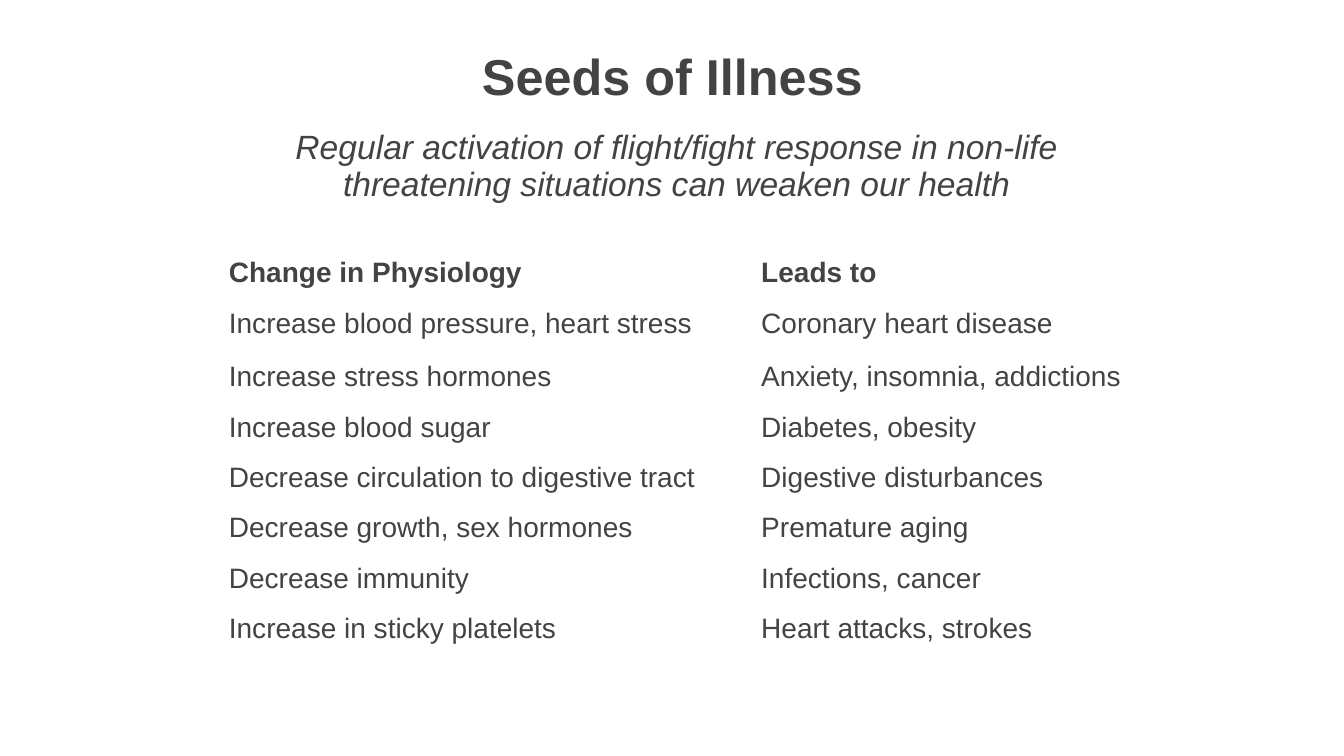
from dataclasses import dataclass

from pptx import Presentation
from pptx.dml.color import RGBColor
from pptx.enum.text import MSO_ANCHOR, PP_ALIGN
from pptx.util import Inches, Pt


@dataclass(frozen=True)
class Theme:
    font: str = "Arial"
    text: RGBColor = RGBColor(0x43, 0x43, 0x43)
    title_size: int = 36
    subtitle_size: int = 24
    table_size: int = 20


THEME = Theme()
TITLE = "Seeds of Illness"
SUBTITLE = ("Regular activation of flight/fight response in non-life "
            "threatening situations can weaken our health")
EFFECTS = [
    ("Change in Physiology", "Leads to"),
    ("Increase blood pressure, heart stress", "Coronary heart disease"),
    ("Increase stress hormones", "Anxiety, insomnia, addictions"),
    ("Increase blood sugar", "Diabetes, obesity"),
    ("Decrease circulation to digestive tract", "Digestive disturbances"),
    ("Decrease growth, sex hormones", "Premature aging"),
    ("Decrease immunity", "Infections, cancer"),
    ("Increase in sticky platelets", "Heart attacks, strokes"),
]
COLUMN_WIDTHS = [5.28, 3.97]
ROW_HEIGHTS = [0.43, 0.56] + [0.5] * 6


def write_text(text_frame, text, size, bold=False, italic=False, align=PP_ALIGN.LEFT):
    text_frame.text = text
    paragraph = text_frame.paragraphs[0]
    paragraph.alignment = align
    font = paragraph.font
    font.name = THEME.font
    font.size = Pt(size)
    font.bold = bold
    font.italic = italic
    font.color.rgb = THEME.text
    return paragraph


def add_title(slide):
    title = slide.shapes.title
    title.left, title.top = Inches(1.67), Inches(0.33)
    title.width, title.height = Inches(10), Inches(0.83)
    title.text_frame.vertical_anchor = MSO_ANCHOR.MIDDLE
    write_text(title.text_frame, TITLE, THEME.title_size, bold=True, align=PP_ALIGN.CENTER)


def add_subtitle(slide):
    box = slide.shapes.add_textbox(Inches(2.67), Inches(1.25), Inches(8.08), Inches(0.83))
    box.text_frame.word_wrap = True
    paragraph = write_text(box.text_frame, SUBTITLE, THEME.subtitle_size,
                           italic=True, align=PP_ALIGN.CENTER)
    paragraph.line_spacing = 0.9


def add_effects_table(slide):
    frame = slide.shapes.add_table(len(EFFECTS), len(COLUMN_WIDTHS), Inches(2.17), Inches(2.5),
                                   Inches(sum(COLUMN_WIDTHS)), Inches(sum(ROW_HEIGHTS)))
    table = frame.table
    table.horz_banding = False
    for column, width in zip(table.columns, COLUMN_WIDTHS):
        column.width = Inches(width)
    for index, (row, height, texts) in enumerate(zip(table.rows, ROW_HEIGHTS, EFFECTS)):
        row.height = Inches(height)
        is_header = index == 0
        for cell, text in zip(row.cells, texts):
            cell.fill.background()
            cell.vertical_anchor = MSO_ANCHOR.TOP if is_header else MSO_ANCHOR.MIDDLE
            write_text(cell.text_frame, text, THEME.table_size, bold=is_header)


def main():
    presentation = Presentation()
    presentation.slide_width = Inches(13.33)
    presentation.slide_height = Inches(7.5)
    title_only = presentation.slide_layouts.get_by_name("Title Only")
    slide = presentation.slides.add_slide(title_only)
    add_title(slide)
    add_effects_table(slide)
    add_subtitle(slide)
    presentation.save("out.pptx")


if __name__ == "__main__":
    main()
